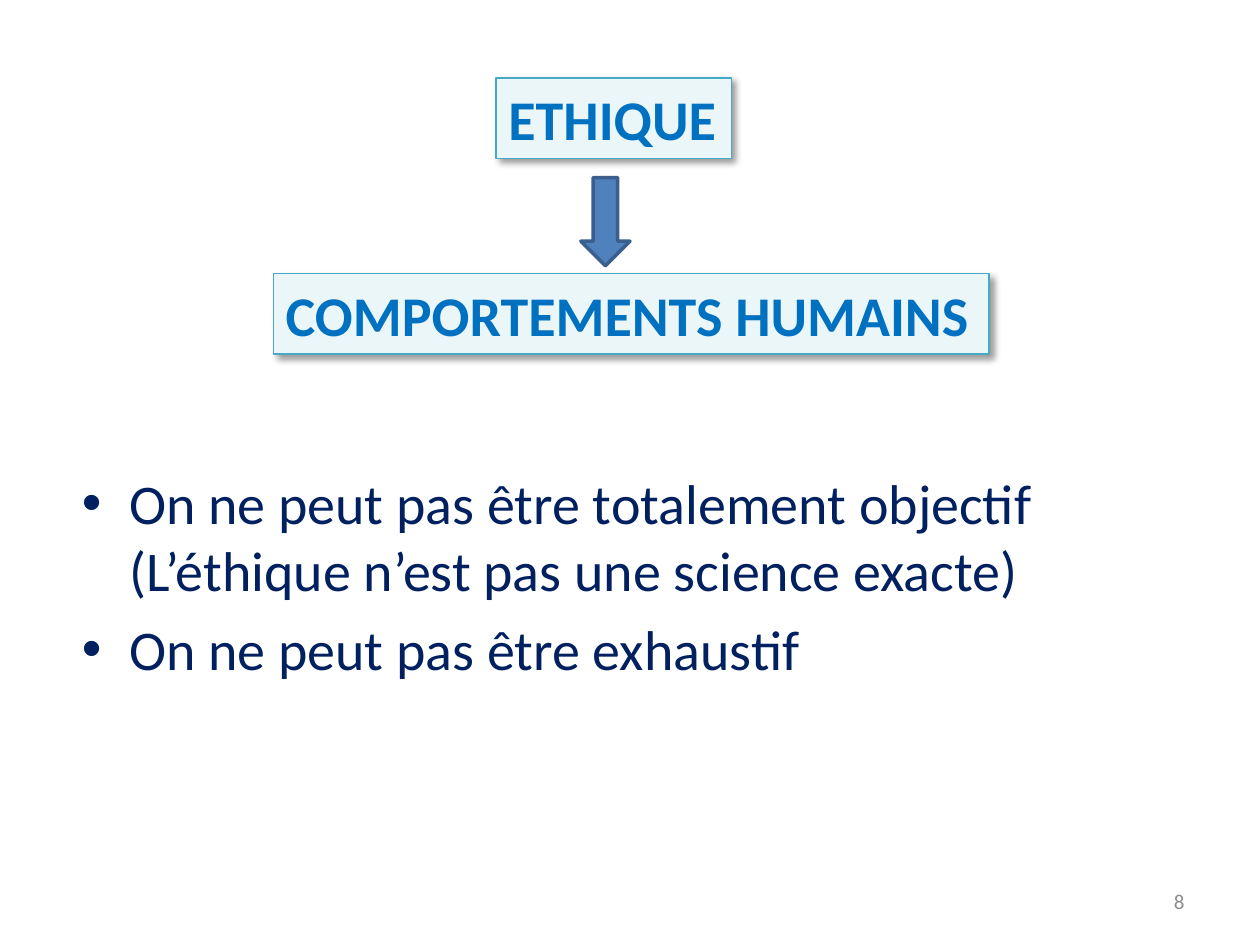
import pptx
import pptx.util
import pptx.dml.color
import pptx.enum.shapes
import pptx.enum.text
import pptx.oxml
import pptx.oxml.ns

Pt = pptx.util.Pt
SHAPES = pptx.enum.shapes.MSO_SHAPE
ANCHOR = pptx.enum.text.MSO_ANCHOR
ALIGN = pptx.enum.text.PP_ALIGN

CONCEPTS = [
    ("ETHIQUE", (283.5, 44.6, 134.6, 46.1)),
    ("COMPORTEMENTS HUMAINS", (156.2, 156.2, 409, 46.1)),
]
ARROW_AREA = (331.9, 101.5, 28.1, 50.4)
POINTS = [
    "On ne peut pas être totalement objectif (L’éthique n’est pas une science exacte)",
    "On ne peut pas être exhaustif",
]
POINTS_AREA = (39.6, 264.2, 648, 157.7)
PAGE_NUMBER = "8"
PAGE_NUMBER_AREA = (516, 500.4, 168, 28.8)

THEME = {
    "font": "Calibri",
    "text_size": 32,
    "number_size": 12,
    "body": "002060",
    "concept": "0070C0",
    "concept_fill": "EBF6F9",
    "concept_line": "46AAC5",
    "arrow_fill": "4F81BD",
    "arrow_line": "3A5F8C",
    "number": "8C8C8C",
}

SHADOW = (
    f'<a:effectLst {pptx.oxml.ns.nsdecls("a")}>'
    f'<a:outerShdw blurRad="{Pt(4)}" dist="{Pt(3)}" dir="2700000" algn="tl" rotWithShape="0">'
    '<a:srgbClr val="000000"><a:alpha val="40000"/></a:srgbClr>'
    "</a:outerShdw></a:effectLst>"
)


def color(name):
    return pptx.dml.color.RGBColor.from_string(THEME[name])


def lengths(area):
    return [Pt(value) for value in area]


def format_text(para, size, color_name, bold=False):
    for span in para.runs:
        span.font.name = THEME["font"]
        span.font.size = Pt(THEME[size])
        span.font.bold = bold
        span.font.color.rgb = color(color_name)


def add_filled_shape(page, kind, area, role, line_width):
    box = page.shapes.add_shape(kind, *lengths(area))
    box.shadow.inherit = False
    box.fill.solid()
    box.fill.fore_color.rgb = color(role + "_fill")
    box.line.color.rgb = color(role + "_line")
    box.line.width = Pt(line_width)
    return box


def add_concept(page, text, area):
    box = add_filled_shape(page, SHAPES.RECTANGLE, area, "concept", 0.75)
    properties = box.fill._xPr
    properties.remove(properties.find(pptx.oxml.ns.qn("a:effectLst")))
    properties.append(pptx.oxml.parse_xml(SHADOW))
    frame = box.text_frame
    frame.word_wrap = True
    frame.vertical_anchor = ANCHOR.MIDDLE
    frame.text = text
    para = frame.paragraphs[0]
    para.alignment = ALIGN.LEFT
    format_text(para, "text_size", "concept", bold=True)


def add_points(page):
    body = page.placeholders[1]
    body.left, body.top, body.width, body.height = lengths(POINTS_AREA)
    body.text_frame.text = "\n".join(POINTS)
    for para in body.text_frame.paragraphs:
        format_text(para, "text_size", "body")


def add_page_number(page):
    box = page.shapes.add_textbox(*lengths(PAGE_NUMBER_AREA))
    frame = box.text_frame
    frame.word_wrap = True
    frame.vertical_anchor = ANCHOR.MIDDLE
    frame.text = PAGE_NUMBER
    para = frame.paragraphs[0]
    para.alignment = ALIGN.RIGHT
    format_text(para, "number_size", "number")


def main():
    deck = pptx.Presentation()
    deck.slide_width, deck.slide_height = Pt(720), Pt(540)
    page = deck.slides.add_slide(deck.slide_layouts[1])
    title = page.shapes.title.element
    title.getparent().remove(title)
    add_points(page)
    for text, area in CONCEPTS:
        add_concept(page, text, area)
    add_filled_shape(page, SHAPES.DOWN_ARROW, ARROW_AREA, "arrow", 2)
    add_page_number(page)
    deck.save("out.pptx")


if __name__ == "__main__":
    main()
